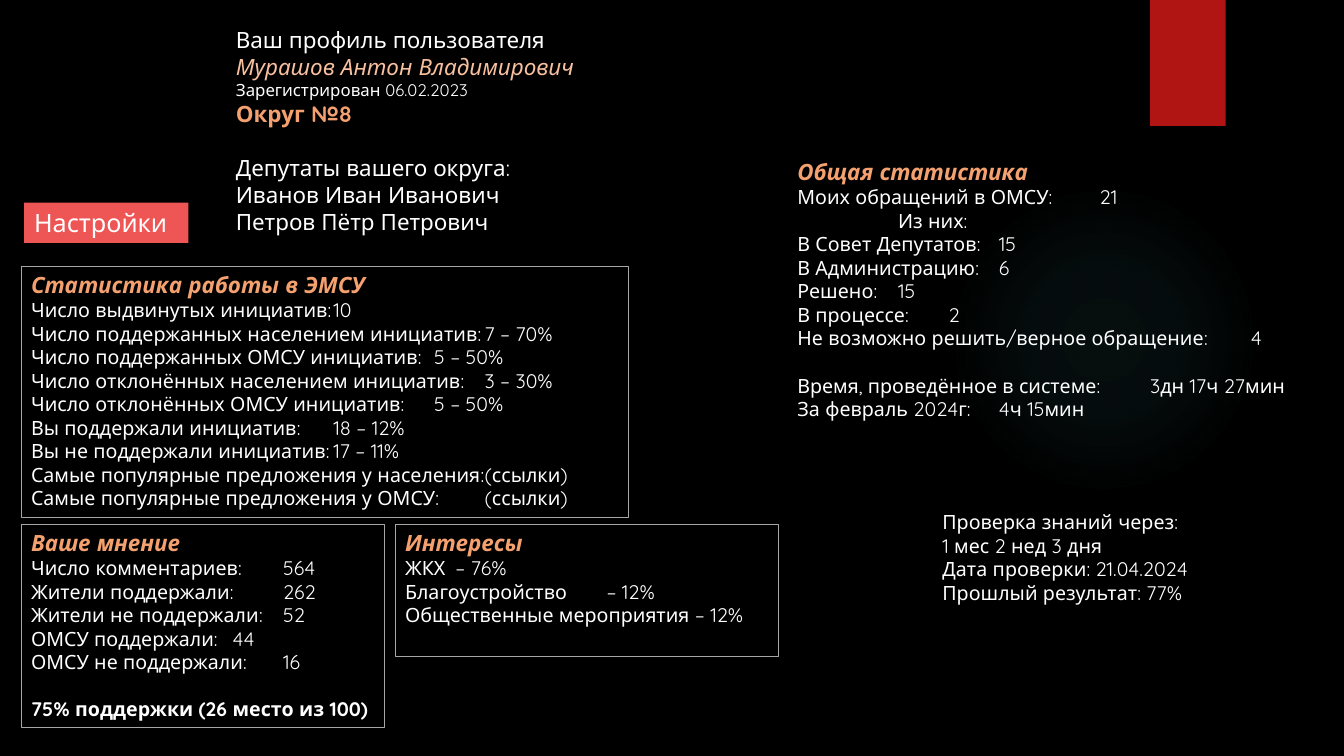
from dataclasses import dataclass

from lxml import etree
from pptx import Presentation
from pptx import util as u
from pptx.dml import color
from pptx.enum import shapes, text
from pptx.oxml import ns

Pt = u.Pt
COLOURS = {
    "background": "000000",
    "white": "FFFFFF",
    "peach": "F8C09F",
    "orange": "F4A16F",
    "border": "A6A6A6",
    "button": "ED5654",
    "ribbon": "B01513",
    "glow": "50B9C1",
}


def font_format(size: float, colour: str = "white", bold: bool = False, italic: bool = False) -> dict:
    return {"size": Pt(size), "bold": bold, "italic": italic, "name": "Quicksand", "colour": colour}


FORMATS = {
    "heading": font_format(16, "orange", bold=True, italic=True),
    "row": font_format(14),
    "strong row": font_format(14, bold=True),
    "profile": font_format(16),
    "user": font_format(16, "peach", italic=True),
    "registered": font_format(12),
    "district": font_format(16, "orange", bold=True),
    "button": font_format(18),
}


@dataclass
class Line:
    text: str
    style: str = "row"
    tab: float = 0
    before: float = 0
    indent: float = 0


@dataclass
class Panel:
    left: float
    top: float
    width: float
    height: float
    lines: list[Line]
    fill: str = ""
    border: str = ""

    @property
    def frame(self) -> list[u.Length]:
        return [Pt(v) for v in (self.left, self.top, self.width, self.height)]


PROFILE = Panel(161.28, 15.12, 302.4, 162.72, [
    Line("Ваш профиль пользователя", "profile"),
    Line("Мурашов Антон Владимирович", "user"),
    Line("Зарегистрирован 06.02.2023", "registered"),
    Line("Округ №8", "district"),
    Line("Депутаты вашего округа:", "profile", before=19.3),
    Line("Иванов Иван Иванович", "profile"),
    Line("Петров Пётр Петрович", "profile"),
])

OVERALL = Panel(562.32, 109.44, 371.52, 246.96, [
    Line("Общая статистика", "heading"),
    Line("Моих обращений в ОМСУ:\t21", tab=216),
    Line("Из них:", indent=72),
    Line("В Совет Депутатов:\t15", tab=144),
    Line("В Администрацию:\t6", tab=144),
    Line("Решено:\t15", tab=144),
    Line("В процессе:\t2", tab=144),
    Line("Не возможно решить/верное обращение:\t4", tab=324),
    Line("Время, проведённое в системе:\t3дн 17ч 27мин", tab=252, before=16.8),
    Line("За февраль 2024г:\t4ч 15мин", tab=144),
])

PANELS = [
    Panel(15.12, 190.08, 434.16, 179.28, [
        Line("Статистика работы в ЭМСУ", "heading"),
        Line("Число выдвинутых инициатив:\t10", tab=360),
        Line("Число поддержанных населением инициатив:\t7 – 70%", tab=324),
        Line("Число поддержанных ОМСУ инициатив:\t5 – 50%", tab=360),
        Line("Число отклонённых населением инициатив:\t3 – 30%", tab=360),
        Line("Число отклонённых ОМСУ инициатив:\t5 – 50%", tab=360),
        Line("Вы поддержали инициатив:\t18 – 12%", tab=360),
        Line("Вы не поддержали инициатив:\t17 – 11%", tab=324),
        Line("Самые популярные предложения у населения:\t(ссылки)", tab=346),
        Line("Самые популярные предложения у ОМСУ:\t(ссылки)", tab=358),
    ], border="border"),
    Panel(15.12, 374.4, 259.92, 145.44, [
        Line("Ваше мнение", "heading"),
        Line("Число комментариев:\t564", tab=180),
        Line("Жители поддержали:\t262", tab=180),
        Line("Жители не поддержали:\t52", tab=180),
        Line("ОМСУ поддержали:\t44", tab=180),
        Line("ОМСУ не поддержали:\t16", tab=180),
        Line("75% поддержки (26 место из 100)", "strong row", before=16.8),
    ], border="border"),
    Panel(282.24, 374.4, 273.6, 94.32, [
        Line("Интересы", "heading"),
        Line("ЖКХ\t– 76%", tab=148),
        Line("Благоустройство\t– 12%", tab=148),
        Line("Общественные мероприятия – 12%"),
    ], border="border"),
    Panel(17.28, 144.72, 117.36, 28.8, [Line("Настройки", "button")], fill="button"),
    Panel(666, 360.72, 252, 74.88, [
        Line("Проверка знаний через:"),
        Line("1 мес 2 нед 3 дня"),
        Line("Дата проверки: 21.04.2024"),
        Line("Прошлый результат: 77%"),
    ]),
]


def rgb(name: str) -> color.RGBColor:
    return color.RGBColor.from_string(COLOURS[name])


def write_lines(frame, lines: list[Line]) -> None:
    """Fill a text frame, aligning the values after a tab on each line's own stop."""
    layout = {"word_wrap": True, "auto_size": text.MSO_AUTO_SIZE.NONE,
              "vertical_anchor": text.MSO_ANCHOR.TOP,
              "margin_left": Pt(7.2), "margin_right": Pt(7.2),
              "margin_top": Pt(3.6), "margin_bottom": Pt(3.6)}
    for name, value in layout.items():
        setattr(frame, name, value)
    for number, line in enumerate(lines):
        paragraph = frame.add_paragraph() if number else frame.paragraphs[0]
        paragraph.alignment = text.PP_ALIGN.LEFT
        paragraph.space_before = Pt(line.before)
        properties = paragraph._p.get_or_add_pPr()
        properties.set("marL", str(Pt(line.indent)))
        properties.set("indent", "0")
        etree.SubElement(properties, ns.qn("a:buNone"))
        if line.tab:
            stops = etree.SubElement(properties, ns.qn("a:tabLst"))
            etree.SubElement(stops, ns.qn("a:tab"), pos=str(Pt(line.tab)), algn="l")
        run = paragraph.add_run()
        run.text = line.text
        for name, value in FORMATS[line.style].items():
            if name == "colour":
                run.font.color.rgb = rgb(value)
            else:
                setattr(run.font, name, value)


def fill_placeholder(placeholder, panel: Panel) -> None:
    for name, value in zip(("left", "top", "width", "height"), panel.frame):
        setattr(placeholder, name, value)
    write_lines(placeholder.text_frame, panel.lines)


def draw_panel(slide, panel: Panel, kind=shapes.MSO_SHAPE.RECTANGLE):
    if panel.lines and not (panel.fill or panel.border):
        box = slide.shapes.add_textbox(*panel.frame)
    else:
        box = slide.shapes.add_shape(kind, *panel.frame)
        box.shadow.inherit = False
    if panel.fill:
        box.fill.solid()
        box.fill.fore_color.rgb = rgb(panel.fill)
    else:
        box.fill.background()
    if panel.border:
        box.line.color.rgb = rgb(panel.border)
        box.line.width = Pt(0.75)
    else:
        box.line.fill.background()
    if panel.lines:
        write_lines(box.text_frame, panel.lines)
    return box


def add_glow(shape) -> None:
    """Replace the fill with a radial gradient that fades out from the centre."""
    stops = "".join(
        f'<a:gs pos="{place}000"><a:srgbClr val="{COLOURS["glow"]}">'
        f'<a:alpha val="{alpha}000"/></a:srgbClr></a:gs>'
        for place, alpha in ((0, 7), (36, 6), (69, 0)))
    gradient = etree.fromstring(
        f'<a:gradFill {ns.nsdecls("a")}><a:gsLst>{stops}</a:gsLst><a:path path="circle">'
        '<a:fillToRect l="50000" t="50000" r="50000" b="50000"/></a:path></a:gradFill>')
    old_fill = shape._element.spPr.find(ns.qn("a:solidFill"))
    old_fill.getparent().replace(old_fill, gradient)


def main() -> None:
    deck = Presentation()
    deck.slide_width, deck.slide_height = Pt(960), Pt(540)
    slide = deck.slides.add_slide(deck.slide_layouts[1])
    slide.background.fill.solid()
    slide.background.fill.fore_color.rgb = rgb("background")

    glow = draw_panel(slide, Panel(677.52, 131.76, 221.76, 221.76, [], fill="glow"),
                      shapes.MSO_SHAPE.OVAL)
    add_glow(glow)
    ribbon = draw_panel(slide, Panel(821.52, 0, 54, 90, [], fill="ribbon"))
    for backdrop in (ribbon, glow):
        slide.shapes._spTree.insert(2, backdrop._element)

    fill_placeholder(slide.shapes.title, PROFILE)
    fill_placeholder(slide.placeholders[1], OVERALL)
    for panel in PANELS:
        draw_panel(slide, panel)
    deck.save("out.pptx")


if __name__ == "__main__":
    main()
